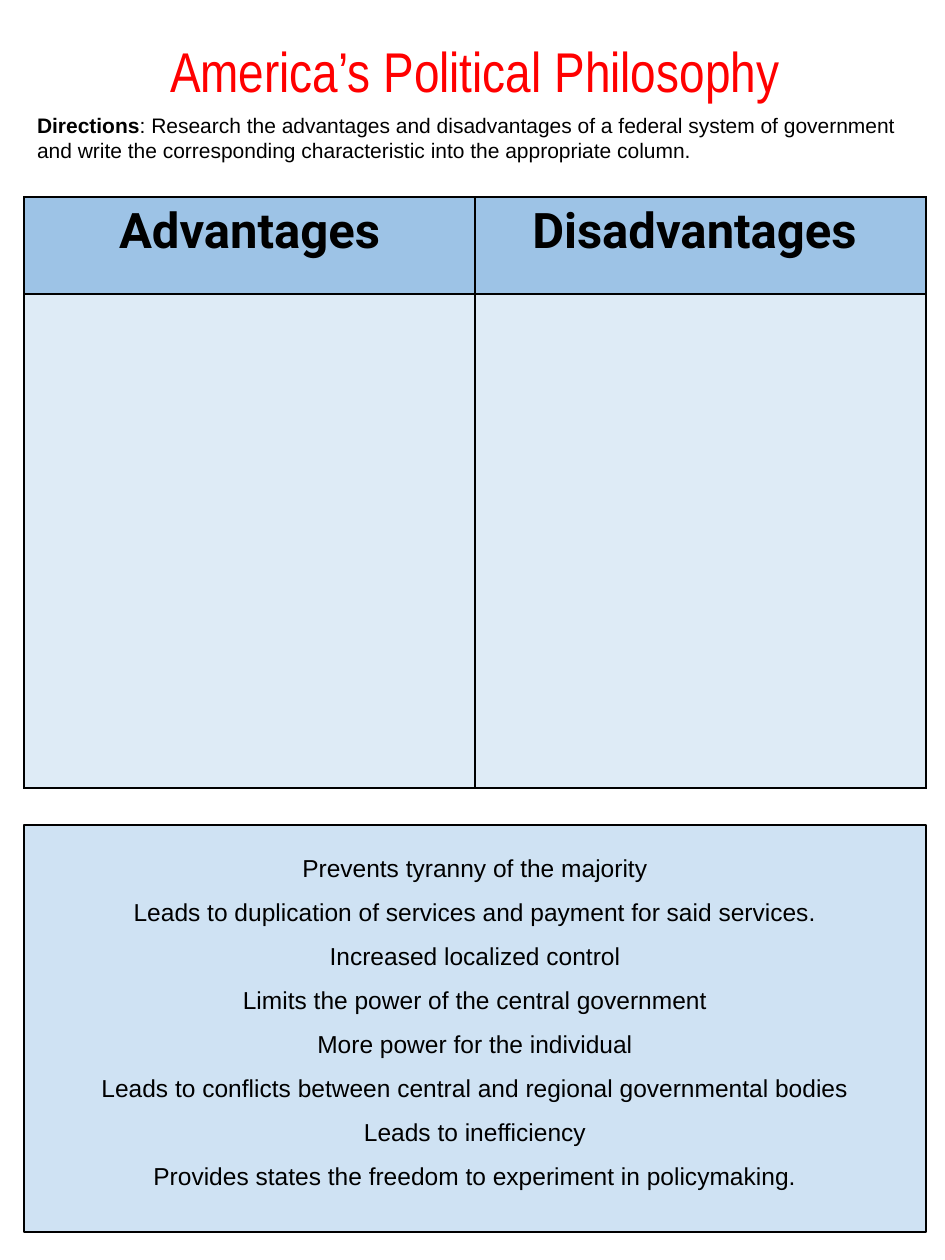
from lxml import etree
from pptx import Presentation
from pptx.dml.color import RGBColor
from pptx.enum.shapes import MSO_SHAPE
from pptx.enum.text import MSO_ANCHOR, MSO_AUTO_SIZE, PP_ALIGN
from pptx.oxml.ns import qn
from pptx.util import Pt

RECTANGLE = MSO_SHAPE.RECTANGLE
TOP, MIDDLE = MSO_ANCHOR.TOP, MSO_ANCHOR.MIDDLE
LEFT, CENTER = PP_ALIGN.LEFT, PP_ALIGN.CENTER
NO_AUTOFIT = MSO_AUTO_SIZE.NONE

RED = RGBColor(0xFF, 0x00, 0x00)
BLACK = RGBColor(0x00, 0x00, 0x00)
HEADER_BLUE = RGBColor(0x9D, 0xC3, 0xE6)
COLUMN_BLUE = RGBColor(0x5B, 0x9B, 0xD5)
BANK_BLUE = RGBColor(0xCF, 0xE2, 0xF3)
COLUMN_OPACITY = 20

TITLE = "America’s Political Philosophy"
DIRECTIONS = [
    ("Directions", True),
    (": Research the advantages and disadvantages of a federal system of government "
     "and write the corresponding characteristic into the appropriate column.", False),
]
HEADERS = ["Advantages", "Disadvantages "]
CHARACTERISTICS = [
    "Prevents tyranny of the majority",
    "Leads to duplication of services and payment for said services.",
    "Increased localized control",
    "Limits the power of the central government",
    "More power for the individual",
    "Leads to conflicts between central and regional governmental bodies",
    "Leads to inefficiency",
    "Provides states the freedom to experiment in policymaking.",
]

EMU_PER_PX = 914400 / 126
SLIDE_WIDTH, SLIDE_HEIGHT = 945, 1260
MARGIN, CONTENT_WIDTH = 24, 902
TITLE_BOX = (53, 30, 844, 72)
DIRECTIONS_BOX = (MARGIN, 78, CONTENT_WIDTH, 120)
TABLE_TOP = 197
ROW_HEIGHTS = [97, 494]
BANK_BOX = (MARGIN, 825, CONTENT_WIDTH, 407)
INSET = 13


def px(*lengths):
    """Turn px lengths into EMU."""
    return [round(length * EMU_PER_PX) for length in lengths]


def add_run(paragraph, text, size, font_name="Arial", color=BLACK, bold=False):
    run = paragraph.add_run()
    run.text = text
    for name, value in {"name": font_name, "size": Pt(size), "bold": bold}.items():
        setattr(run.font, name, value)
    run.font.color.rgb = color


def format_frame(frame, anchor, horizontal_inset, vertical_inset):
    side, edge = px(horizontal_inset, vertical_inset)
    settings = {
        "word_wrap": True, "auto_size": NO_AUTOFIT, "vertical_anchor": anchor,
        "margin_left": side, "margin_right": side,
        "margin_top": edge, "margin_bottom": edge,
    }
    for name, value in settings.items():
        setattr(frame, name, value)


def add_borders(cell):
    """Draw a 1 pt black line on all four sides of the cell."""
    properties = cell._tc.get_or_add_tcPr()
    for position, tag in enumerate(("a:lnL", "a:lnR", "a:lnT", "a:lnB")):
        line = etree.Element(qn(tag), w=str(Pt(1)))
        fill = etree.SubElement(line, qn("a:solidFill"))
        etree.SubElement(fill, qn("a:srgbClr"), val=str(BLACK))
        properties.insert(position, line)


def fill_cell(cell, color, opacity=100):
    cell.fill.solid()
    cell.fill.fore_color.rgb = color
    if opacity < 100:
        color_element = cell._tc.tcPr.find(".//" + qn("a:srgbClr"))
        etree.SubElement(color_element, qn("a:alpha"), val=str(opacity * 1000))


def add_title(slide):
    title = slide.shapes.title
    title.left, title.top, title.width, title.height = px(*TITLE_BOX)
    format_frame(title.text_frame, TOP, INSET, 6)
    paragraph = title.text_frame.paragraphs[0]
    paragraph.alignment = CENTER
    add_run(paragraph, TITLE, 32, "Arial Narrow", RED)


def add_directions(slide):
    frame = slide.shapes.add_textbox(*px(*DIRECTIONS_BOX)).text_frame
    format_frame(frame, MIDDLE, INSET, INSET)
    paragraph = frame.paragraphs[0]
    paragraph.alignment = LEFT
    for text, bold in DIRECTIONS:
        add_run(paragraph, text, 12, bold=bold)


def add_characteristics_bank(slide):
    bank = slide.shapes.add_shape(RECTANGLE, *px(*BANK_BOX))
    bank.shadow.inherit = False
    bank.fill.solid()
    bank.fill.fore_color.rgb = BANK_BLUE
    bank.line.color.rgb = BLACK
    bank.line.width = Pt(0.75)
    frame = bank.text_frame
    format_frame(frame, TOP, INSET, INSET)
    for index, text in enumerate(CHARACTERISTICS):
        paragraph = frame.add_paragraph() if index else frame.paragraphs[0]
        paragraph.alignment = CENTER
        paragraph.line_spacing = 1.5
        add_run(paragraph, text, 14)


def add_comparison_table(slide):
    box = px(MARGIN, TABLE_TOP, CONTENT_WIDTH, sum(ROW_HEIGHTS))
    table = slide.shapes.add_table(len(ROW_HEIGHTS), len(HEADERS), *box).table
    table.first_row = table.horz_banding = False
    for row, height in zip(table.rows, px(*ROW_HEIGHTS)):
        row.height = height
    for column, header in enumerate(HEADERS):
        header_cell, answer_cell = table.cell(0, column), table.cell(1, column)
        paragraph = header_cell.text_frame.paragraphs[0]
        paragraph.alignment = CENTER
        add_run(paragraph, header, 28, "Roboto", bold=True)
        fill_cell(header_cell, HEADER_BLUE)
        fill_cell(answer_cell, COLUMN_BLUE, COLUMN_OPACITY)
        add_borders(header_cell)
        add_borders(answer_cell)


def main():
    presentation = Presentation()
    presentation.slide_width, presentation.slide_height = px(SLIDE_WIDTH, SLIDE_HEIGHT)
    title_only = presentation.slide_layouts.get_by_name("Title Only")
    slide = presentation.slides.add_slide(title_only)
    add_title(slide)
    add_directions(slide)
    add_characteristics_bank(slide)
    add_comparison_table(slide)
    presentation.save("out.pptx")


if __name__ == "__main__":
    main()
